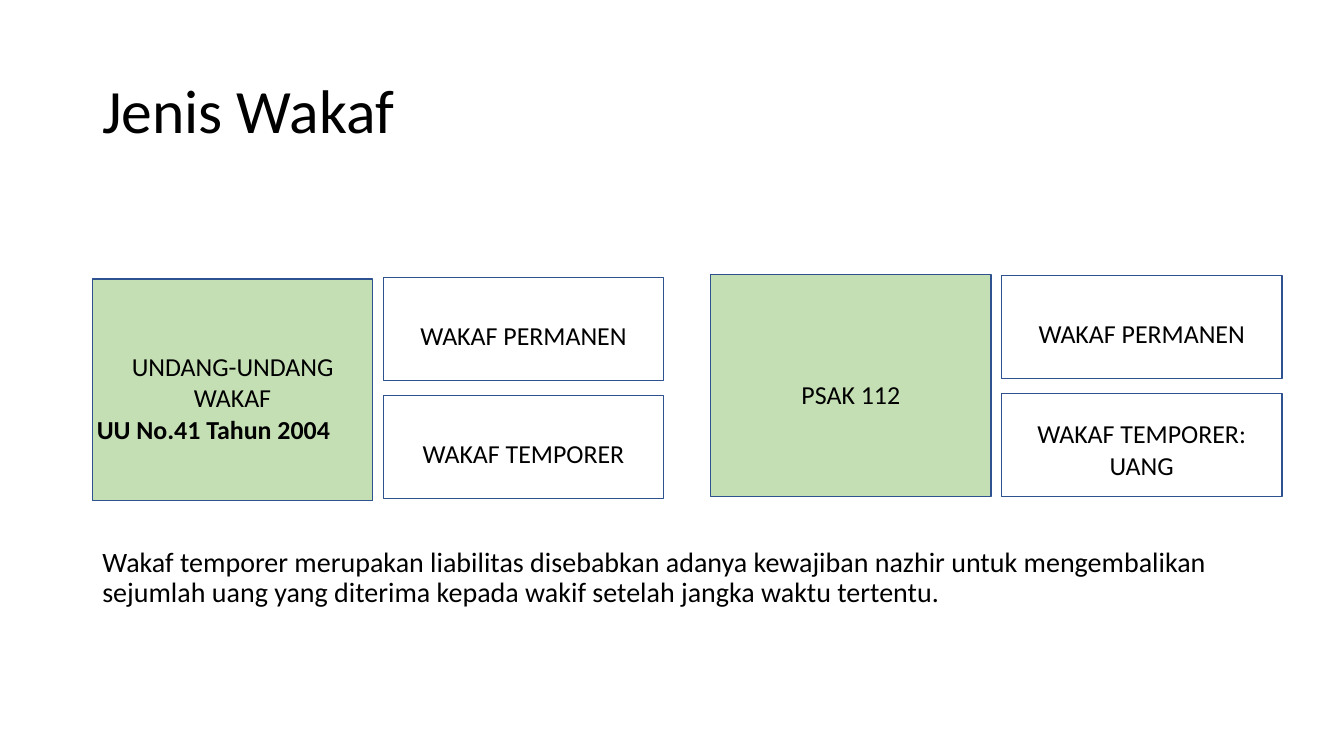
import pptx
import pptx.util
import pptx.dml.color
import pptx.enum.shapes
import pptx.enum.text

Pt = pptx.util.Pt
ALIGN = pptx.enum.text.PP_ALIGN
ANCHOR = pptx.enum.text.MSO_ANCHOR

COLORS = {"text": "000000", "label": "C5DFB4", "cell": "FFFFFF", "line": "2E528F"}
BOX_WIDTH = 200.2
LABEL_HEIGHT = 158.4
CELL_HEIGHT = 73.6
CELL_PITCH = 84.2
CELL_OFFSET = 207.8


def rgb(name):
    return pptx.dml.color.RGBColor.from_string(COLORS[name])


def style_paragraph(para, size, align, line_spacing, bold=False):
    para.alignment = align
    para.line_spacing = line_spacing
    para.font.name = "Calibri"
    para.font.size = Pt(size)
    para.font.bold = bold
    para.font.color.rgb = rgb("text")


def add_prose(page, left, top, width, height, text, size, anchor):
    box = page.shapes.add_textbox(Pt(left), Pt(top), Pt(width), Pt(height))
    frame = box.text_frame
    frame.word_wrap = True
    frame.vertical_anchor = anchor
    para = frame.paragraphs[0]
    para.text = text
    style_paragraph(para, size, ALIGN.LEFT, 0.9)


def add_panel(page, left, top, height, fill, lines, top_inset):
    """Draw a bordered box; each line is (text, left indent, right indent, bold)."""
    box = page.shapes.add_shape(pptx.enum.shapes.MSO_SHAPE.RECTANGLE,
                                Pt(left), Pt(top), Pt(BOX_WIDTH), Pt(height))
    box.shadow.inherit = False
    box.fill.solid()
    box.fill.fore_color.rgb = rgb(fill)
    box.line.color.rgb = rgb("line")
    box.line.width = Pt(1)
    frame = box.text_frame
    frame.word_wrap = True
    frame.vertical_anchor = ANCHOR.MIDDLE
    frame.margin_left = frame.margin_right = frame.margin_bottom = 0
    frame.margin_top = Pt(top_inset)
    for index, (text, indent_left, indent_right, bold) in enumerate(lines):
        para = frame.paragraphs[0] if index == 0 else frame.add_paragraph()
        para.text = text
        style_paragraph(para, 18.5, ALIGN.CENTER, 1.01, bold)
        properties = para._p.get_or_add_pPr()
        properties.set("marL", str(Pt(indent_left)))
        properties.set("marR", str(Pt(indent_right)))


def add_waqf_group(page, left, label_top, cells_top, label_lines, label_inset, cells):
    """Draw a green label with its stacked types on the right."""
    add_panel(page, left, label_top, LABEL_HEIGHT, "label", label_lines, label_inset)
    for row, (text, inset) in enumerate(cells):
        add_panel(page, left + CELL_OFFSET, cells_top + row * CELL_PITCH,
                  CELL_HEIGHT, "cell", [(text, 14, 14, False)], inset)


def build_page(page):
    add_prose(page, 66, 28.8, 828, 104.4, "Jenis Wakaf", 44, ANCHOR.MIDDLE)
    add_waqf_group(page, 66, 199.2, 198.2,
                   [("UNDANG-UNDANG WAKAF", 22, 22, False),
                    ("UU No.41 Tahun 2004", 0, 27.4, True)], 11,
                   [("WAKAF PERMANEN", 8.5), ("WAKAF TEMPORER", 8.5)])
    add_waqf_group(page, 507.6, 196.1, 196.8,
                   [("PSAK 112", 0, 0, False)], 12,
                   [("WAKAF PERMANEN", 8.5), ("WAKAF TEMPORER: UANG", 6)])
    add_prose(page, 66, 388, 828, 68.4,
              "Wakaf temporer merupakan liabilitas disebabkan adanya kewajiban nazhir "
              "untuk mengembalikan sejumlah uang yang diterima kepada wakif setelah "
              "jangka waktu tertentu.", 20, ANCHOR.TOP)


def main():
    deck = pptx.Presentation()
    deck.slide_width, deck.slide_height = Pt(960), Pt(540)
    build_page(deck.slides.add_slide(deck.slide_layouts[6]))
    deck.save("out.pptx")


if __name__ == "__main__":
    main()
